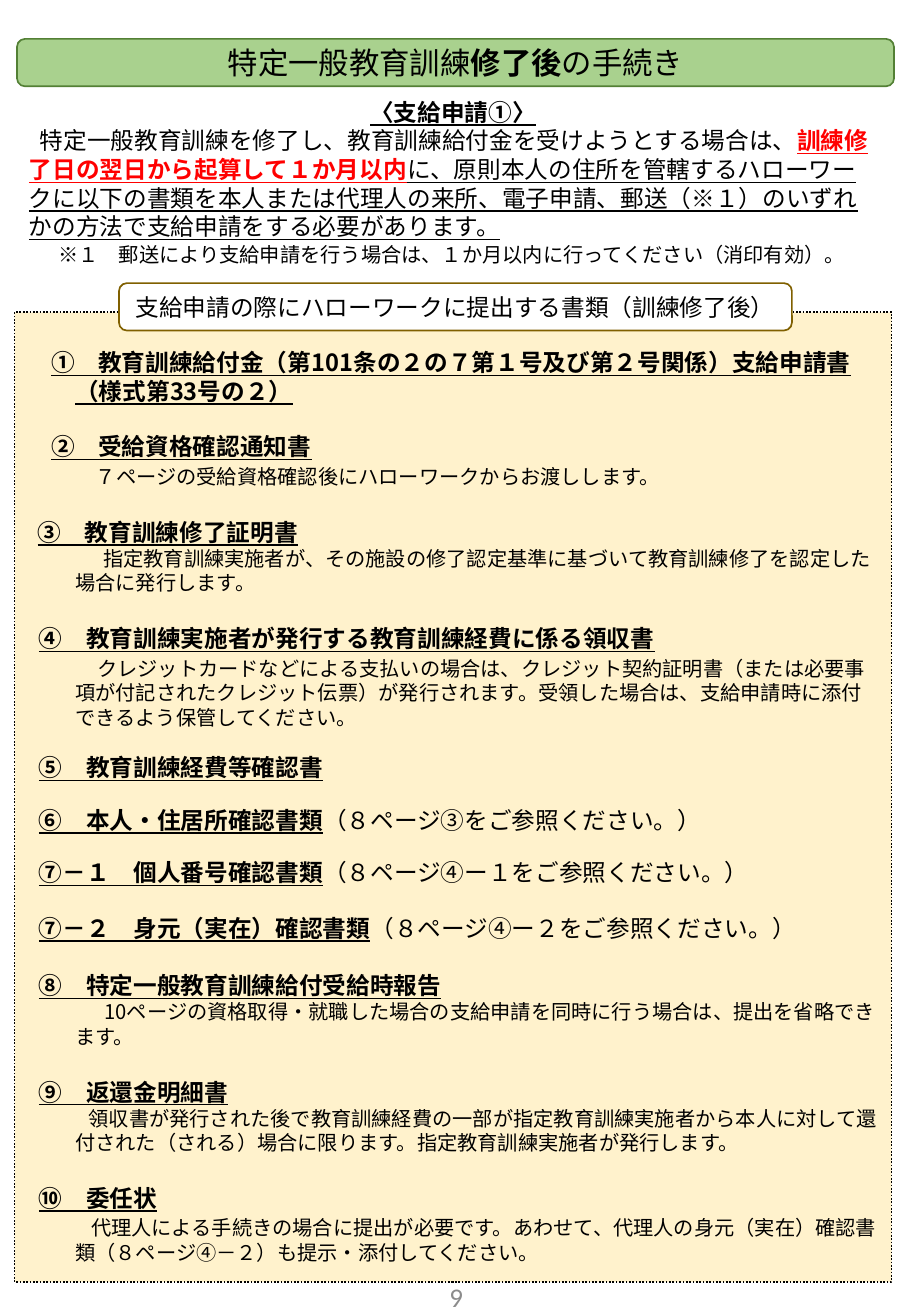
from lxml.etree import SubElement
from pptx import Presentation
from pptx.dml.color import RGBColor
from pptx.enum.dml import MSO_LINE
from pptx.enum.shapes import MSO_SHAPE as Shape
from pptx.enum.text import MSO_ANCHOR as Anchor, MSO_AUTO_SIZE as AutoSize, PP_ALIGN as Align
from pptx.oxml.ns import qn
from pptx.util import Inches, Pt

# Content: a span is (text, style); b = bold, u = underlined, r = red
TITLE = [("特定一般教育訓練", ""), ("修了後", "b"), ("の手続き", "")]
INTRO_HEAD = [("〈支給申請①〉", "bu")]
INTRO = [
    ("特定一般教育訓練を修了し、教育訓練給付金を受けようとする場合は、", ""),
    ("訓練修了日の翌日から起算して１か月以内", "bur"),
    ("に、原則本人の住所を管轄するハローワークに以下の書類を本人または代理人の来所、"
     "電子申請、郵送（※１）のいずれかの方法で支給申請をする必要があります。", "u"),
]
INTRO_NOTE = "※１　郵送により支給申請を行う場合は、１か月以内に行ってください（消印有効）。"
LABEL = "支給申請の際にハローワークに提出する書類（訓練修了後）"
PAGE_NUMBER = "9"

# Each document: heading, plain remark, first-line start, gap above (pt),
# note, note's first-line indent, gap above note (pt)
DOCUMENTS = [
    ("①　教育訓練給付金（第101条の２の７第１号及び第２号関係）支給申請書（様式第33号の２）",
     "", 0.2, 0, "", 0, 0),
    ("②　受給資格確認通知書", "", 0.2, 16,
     "７ページの受給資格確認後にハローワークからお渡しします。", 0.17, 2),
    ("③　教育訓練修了証明書", "", 0.09, 17,
     "指定教育訓練実施者が、その施設の修了認定基準に基づいて教育訓練修了を認定した場合に発行します。",
     0.23, 0),
    ("④　教育訓練実施者が発行する教育訓練経費に係る領収書", "", 0.1, 17,
     "クレジットカードなどによる支払いの場合は、クレジット契約証明書（または必要事項が付記された"
     "クレジット伝票）が発行されます。受領した場合は、支給申請時に添付できるよう保管してください。",
     0.18, 2),
    ("⑤　教育訓練経費等確認書", "", 0.1, 14, "", 0, 0),
    ("⑥　本人・住居所確認書類", "（８ページ③をご参照ください。）", 0.1, 14, "", 0, 0),
    ("⑦－１　個人番号確認書類", "（８ページ④ー１をご参照ください。）", 0.1, 14, "", 0, 0),
    ("⑦－２　身元（実在）確認書類", "（８ページ④ー２をご参照ください。）", 0.1, 16, "", 0, 0),
    ("⑧　特定一般教育訓練給付受給時報告", "", 0.1, 17,
     "10ページの資格取得・就職した場合の支給申請を同時に行う場合は、提出を省略できます。", 0.24, 0),
    ("⑨　返還金明細書", "", 0.1, 17,
     "領収書が発行された後で教育訓練経費の一部が指定教育訓練実施者から本人に対して還付された"
     "（される）場合に限ります。指定教育訓練実施者が発行します。", 0.11, 0),
    ("⑩　委任状", "", 0.1, 17,
     "代理人による手続きの場合に提出が必要です。あわせて、代理人の身元（実在）確認書類"
     "（８ページ④－２）も提示・添付してください。", 0.13, 2),
]

COLORS = {"text": "000000", "red": "FF0000", "bar": "A9D18E", "bar_line": "538035",
          "panel": "FFF2CC", "label": "FFFFFF", "label_line": "806000", "number": "8C8C8C"}
FONT = "Noto Sans CJK JP"
HEAD, NOTE = 14, 12
LINE_PITCH = {HEAD: 17, NOTE: 14.5}
HANG = 0.4

# Places on the page: left, top, width, height in inches
BAR = (0.14, 0.32, 7.22, 0.39)
INTRO_BOX = (0.14, 0.74, 7.18, 1.51)
PANEL = (0.12, 2.57, 7.22, 7.98)
LABEL_BOX = (0.98, 2.33, 5.54, 0.39)
NUMBER_BOX = (2.91, 10.38, 1.69, 0.58)


def color(name):
    return RGBColor.from_string(COLORS[name])


def place(shape, area):
    shape.left, shape.top, shape.width, shape.height = map(Inches, area)


def paint(shape, fill, line):
    shape.fill.solid()
    shape.fill.fore_color.rgb = color(fill)
    shape.line.color.rgb = color(line)
    shape.line.width = Pt(1)


def set_frame(shape, anchor, top=0.05):
    frame = shape.text_frame
    frame.word_wrap = True
    frame.auto_size = AutoSize.NONE
    frame.vertical_anchor = anchor
    frame.margin_left = frame.margin_right = Inches(0.1)
    frame.margin_top, frame.margin_bottom = Inches(top), Inches(0.05)
    return frame


def write(frame, spans, size, align=Align.LEFT, left=0, first=0, gap=0,
          font=FONT, ink="text"):
    """Fill the empty first paragraph, or add one, and return it."""
    para = frame.paragraphs[0]
    if para.runs:
        para = frame.add_paragraph()
    para.alignment = align
    para.space_before, para.space_after = Pt(gap), Pt(0)
    if size in LINE_PITCH:
        para.line_spacing = Pt(LINE_PITCH[size])
    props = para._p.get_or_add_pPr()
    props.set("marL", str(Inches(left)))
    props.set("indent", str(Inches(first)))
    SubElement(props, qn("a:buNone"))
    para.font.size, para.font.name = Pt(size), font
    para.font.color.rgb = color(ink)
    for text, style in spans:
        span = para.add_run()
        span.text = text
        span.font.bold = "b" in style
        span.font.underline = "u" in style
        if "r" in style:
            span.font.color.rgb = color("red")
        SubElement(span._r.get_or_add_rPr(), qn("a:ea")).set("typeface", font)
    return para


def add_rounded(page, area, fill, line):
    shape = page.shapes.add_shape(Shape.ROUNDED_RECTANGLE, *map(Inches, area))
    shape.shadow.inherit = False
    paint(shape, fill, line)
    return shape


def add_text_box(page, area):
    return page.shapes.add_textbox(*map(Inches, area))


def main():
    deck = Presentation()
    deck.slide_width, deck.slide_height = Inches(7.5), Inches(10.83)
    page = deck.slides.add_slide(deck.slide_layouts[1])
    title, panel = page.placeholders

    # Title on its green bar, which lies behind the placeholders
    bar = add_rounded(page, BAR, "bar", "bar_line")
    page.shapes._spTree.insert(2, bar._element)
    place(title, BAR)
    write(set_frame(title, Anchor.MIDDLE), TITLE, 18, Align.CENTER)

    # Panel with the list of documents
    place(panel, PANEL)
    paint(panel, "panel", "text")
    panel.line.dash_style = MSO_LINE.ROUND_DOT
    frame = set_frame(panel, Anchor.TOP, 0.29)
    for heading, remark, start, gap, note, note_indent, note_gap in DOCUMENTS:
        spans = [(heading, "bu")] + ([(remark, "")] if remark else [])
        write(frame, spans, HEAD, left=HANG, first=start - HANG, gap=gap)
        if note:
            write(frame, [(note, "")], NOTE, left=HANG, first=note_indent, gap=note_gap)

    # Label over the panel's top edge
    label = add_rounded(page, LABEL_BOX, "label", "label_line")
    write(set_frame(label, Anchor.MIDDLE), [(LABEL, "")], HEAD, Align.CENTER)

    # Introduction
    frame = set_frame(add_text_box(page, INTRO_BOX), Anchor.TOP, 0.06)
    write(frame, INTRO_HEAD, HEAD, Align.CENTER)
    write(frame, INTRO, HEAD, first=0.09)
    write(frame, [(INTRO_NOTE, "")], NOTE, left=0.24, gap=1)

    # Page number
    frame = set_frame(add_text_box(page, NUMBER_BOX), Anchor.MIDDLE)
    write(frame, [(PAGE_NUMBER, "")], 16, Align.CENTER, font="Calibri", ink="number")

    deck.save("out.pptx")


if __name__ == "__main__":
    main()
